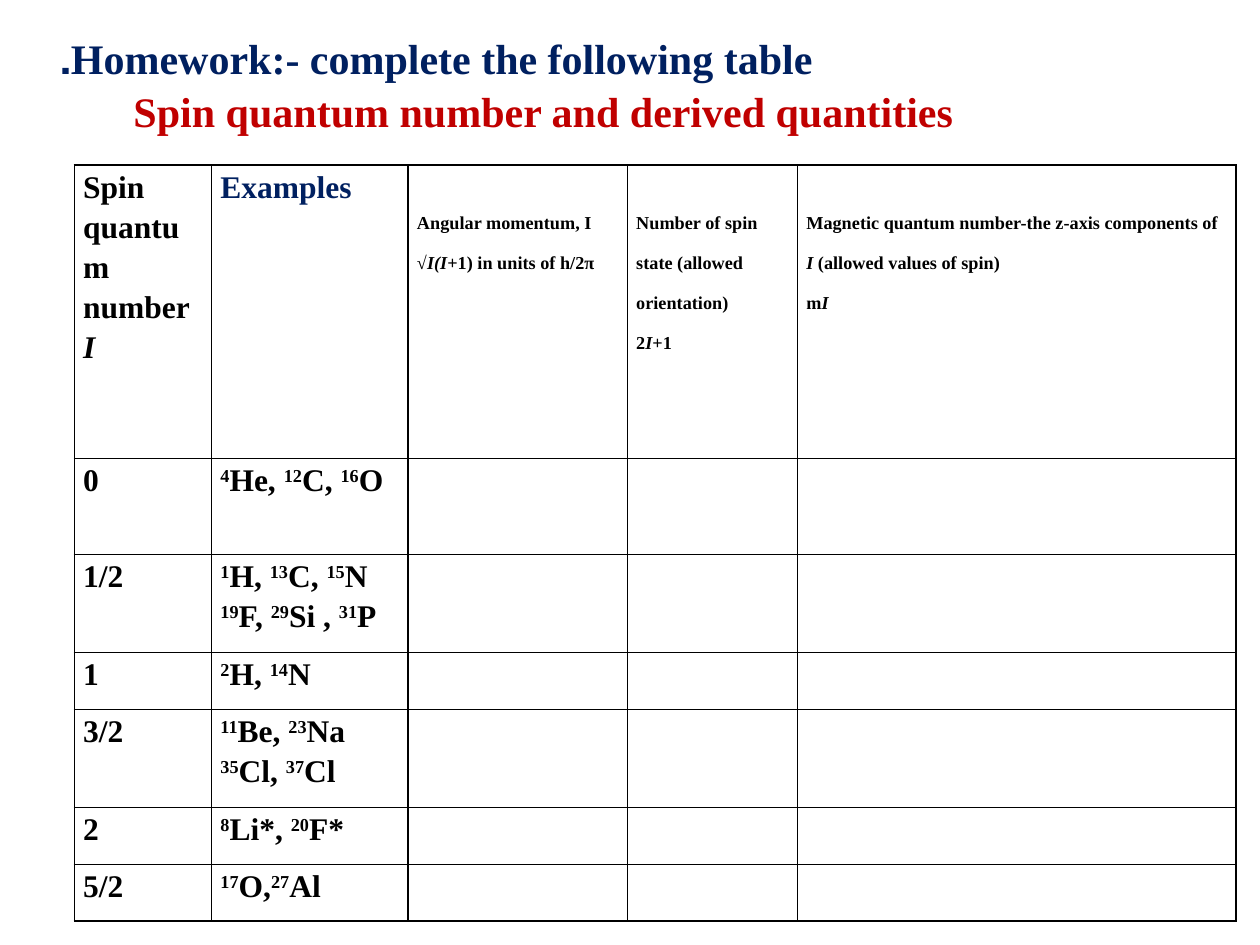
from pptx import Presentation
from pptx.dml.color import RGBColor
from pptx.enum.text import MSO_ANCHOR, PP_ALIGN
from pptx.oxml import parse_xml
from pptx.oxml.ns import nsdecls
from pptx.util import Inches, Pt

COLORS = {"black": "000000", "navy": "002060", "red": "C00000", "white": "FFFFFF"}
COLUMN_WIDTHS = [1.09, 1.56, 1.74, 1.35, 3.48]
ROW_HEIGHTS = [2.33, 0.76, 0.78, 0.45, 0.78, 0.45, 0.45]

# Text between bars is the marked part: italic in headers, superscript in isotopes
HEADERS = [
    (["Spin quantum number", "|I|"], {}),
    (["Examples"], {"color": "navy"}),
    (["Angular momentum, I", "√|I(I|+1) in units of h/2π"], {"raised": True}),
    (["Number of spin state (allowed orientation)", "2|I|+1"], {"raised": True}),
    (["Magnetic quantum number-the z-axis components of |I| (allowed values of spin)",
      "m|I|"], {"raised": True}),
]
ISOTOPES = [
    ("0", ["|4|He, |12|C, |16|O"]),
    ("1/2", ["|1|H, |13|C, |15|N", "|19|F, |29|Si , |31|P"]),
    ("1", ["|2|H, |14|N"]),
    ("3/2", ["|11|Be, |23|Na", "|35|Cl, |37|Cl"]),
    ("2", ["|8|Li*, |20|F*"]),
    ("5/2", ["|17|O,|27|Al"]),
]


def write_text(paragraph, text, size=18, color="black", marked="italic", raised=False):
    """Write bold runs; every second part between bars takes the marked format."""
    for index, part in enumerate(text.split("|")):
        if not part:
            continue
        is_marked = index % 2 == 1
        run = paragraph.add_run()
        run.text = part
        run.font.name = "Times New Roman"
        run.font.size = Pt(size)
        run.font.bold = True
        run.font.italic = is_marked and marked == "italic"
        run.font.color.rgb = RGBColor.from_string(COLORS[color])
        if raised or (is_marked and marked == "superscript"):
            run._r.get_or_add_rPr().set("baseline", "30000")


class SlideBuilder:
    line_spacing = 1.15
    border_width = Pt(1)
    cell_margin = Inches(0.07)
    raised_top = Inches(0.32)

    def __init__(self, presentation):
        self.slide = presentation.slides.add_slide(presentation.slide_layouts[6])

    def title(self, left, top, width, height, heading, subtitle):
        shape = self.slide.shapes.add_textbox(
            Inches(left), Inches(top), Inches(width), Inches(height))
        frame = shape.text_frame
        frame.word_wrap = True
        frame.vertical_anchor = MSO_ANCHOR.MIDDLE
        frame.margin_left = Inches(0.18)
        frame.margin_right = 0

        # The heading runs right to left, so its full stop shows at the left
        paragraph = frame.paragraphs[0]
        paragraph.alignment = PP_ALIGN.LEFT
        paragraph._p.get_or_add_pPr().set("rtl", "1")
        write_text(paragraph, heading, size=24, color="navy")

        paragraph = frame.add_paragraph()
        paragraph.space_before = Pt(1.5)
        paragraph._p.get_or_add_pPr().set("marL", str(Inches(0.58)))
        write_text(paragraph, subtitle, size=24, color="red")

    def table(self, left, top, column_widths, row_heights):
        frame = self.slide.shapes.add_table(
            len(row_heights), len(column_widths), Inches(left), Inches(top),
            Inches(sum(column_widths)), Inches(sum(row_heights)))
        table = frame.table
        table.first_row = table.horz_banding = False
        for column, width in zip(table.columns, column_widths):
            column.width = Inches(width)
        for row, height in zip(table.rows, row_heights):
            row.height = Inches(height)
        for cell in table.iter_cells():
            self.border(cell)
            cell.fill.solid()
            cell.fill.fore_color.rgb = RGBColor.from_string(COLORS["white"])
        return table

    def border(self, cell):
        properties = cell._tc.get_or_add_tcPr()
        for side in ("lnL", "lnR", "lnT", "lnB"):
            properties.append(parse_xml(
                f'<a:{side} {nsdecls("a")} w="{self.border_width}"><a:solidFill>'
                f'<a:srgbClr val="{COLORS["black"]}"/></a:solidFill></a:{side}>'))

    def cell(self, cell, lines, **text_format):
        cell.margin_left = cell.margin_right = self.cell_margin
        cell.margin_top = self.raised_top if text_format.get("raised") else 0
        cell.margin_bottom = 0
        frame = cell.text_frame
        for index, line in enumerate(lines):
            paragraph = frame.add_paragraph() if index else frame.paragraphs[0]
            paragraph.line_spacing = self.line_spacing
            write_text(paragraph, line, **text_format)


def main():
    presentation = Presentation()
    presentation.slide_width = Inches(10)
    presentation.slide_height = Inches(7.5)
    builder = SlideBuilder(presentation)

    # Heading
    builder.title(0.3, 0.21, 7.54, 0.91, "Homework:- complete the following table.",
                  "Spin quantum number and derived quantities")

    # Table with the last three columns left to be filled in
    table = builder.table(0.59, 1.31, COLUMN_WIDTHS, ROW_HEIGHTS)
    for column, (lines, text_format) in enumerate(HEADERS):
        builder.cell(table.cell(0, column), lines, **text_format)
    for row, (spin, examples) in enumerate(ISOTOPES, start=1):
        builder.cell(table.cell(row, 0), [spin])
        builder.cell(table.cell(row, 1), examples, marked="superscript")

    presentation.save("out.pptx")


if __name__ == "__main__":
    main()
